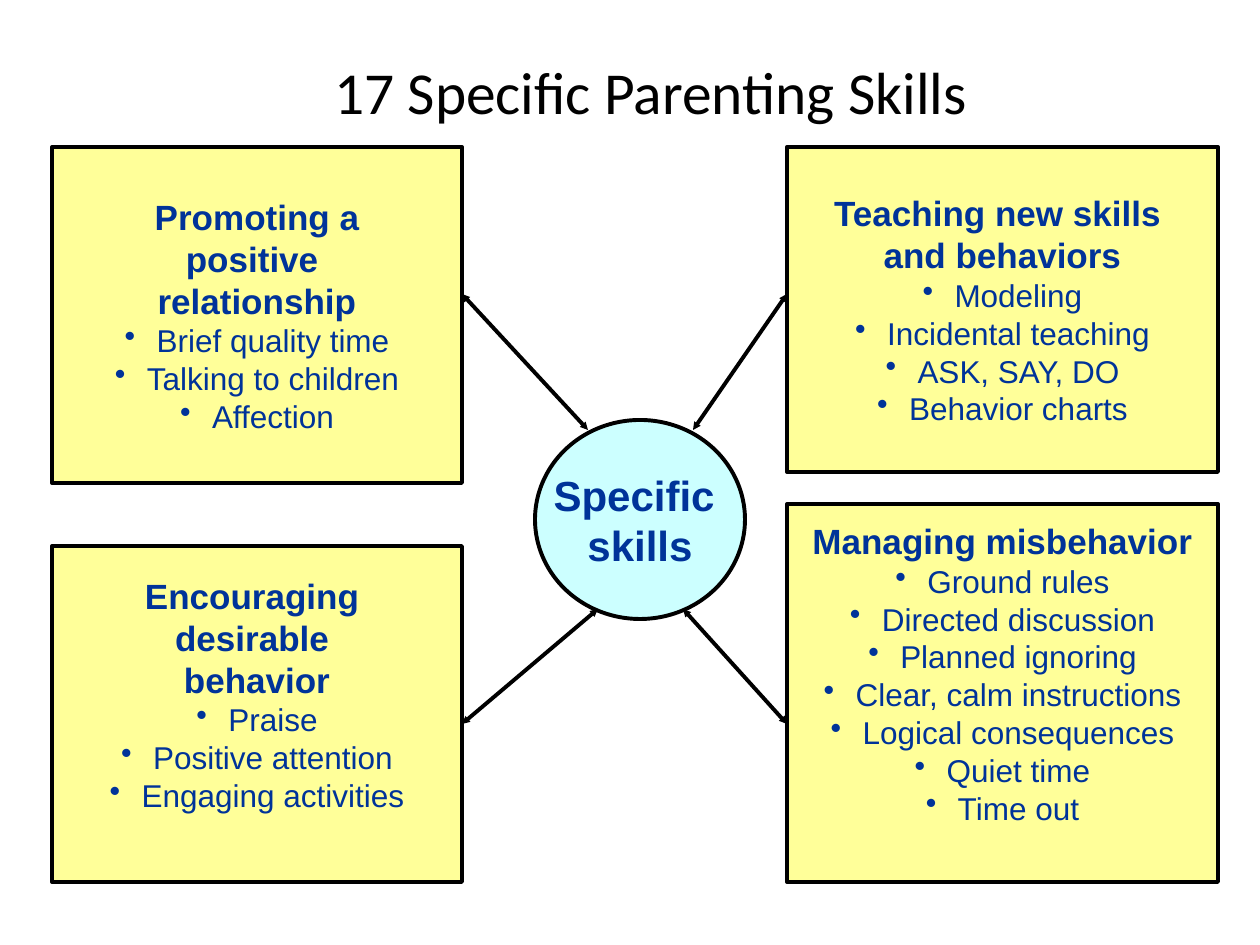
import dataclasses

import lxml.etree
import pptx
import pptx.dml.color
import pptx.enum.shapes
import pptx.enum.text
import pptx.oxml.ns
import pptx.util

EMU_PER_PX = 914400 / 126
SHAPES = pptx.enum.shapes.MSO_SHAPE


@dataclasses.dataclass(frozen=True)
class Theme:
    """Colours, fonts, type sizes and line measures of the slide."""

    ink: str = "000000"
    text: str = "003399"
    box: str = "FFFF99"
    hub: str = "CCFFFF"
    title_font: str = "Calibri"
    body_font: str = "Arial"
    title_size: int = 34
    hub_size: int = 24
    heading_size: int = 20
    item_size: int = 18
    line_width: float = 2.25
    bullet_indent: int = 32
    inset: int = 6
    spare_line: int = 40


THEME = Theme()

SKILL_BOXES = (
    ((52, 147, 410, 336), ("Promoting a", "positive ", "relationship"),
     ("Brief quality time", "Talking to children", "Affection"), 0),
    ((787, 147, 431, 325), ("Teaching new skills ", "and behaviors"),
     ("Modeling", "Incidental teaching", "ASK, SAY, DO", "Behavior charts"), 0),
    ((52, 546, 410, 336), ("Encouraging ", "desirable ", "behavior"),
     ("Praise", "Positive attention", "Engaging activities"), 1),
    ((787, 504, 431, 378), ("Managing misbehavior",),
     ("Ground rules", "Directed discussion", "Planned ignoring",
      "Clear, calm instructions", "Logical consequences", "Quiet time",
      "Time out"), 1),
)

ARROWS = (
    ((588, 430), (462, 294)),
    ((693, 430), (787, 294)),
    ((598, 609), (462, 724)),
    ((683, 609), (787, 724)),
)


def px(length):
    """Turn a length in px into EMU."""
    return pptx.util.Emu(round(length * EMU_PER_PX))


def rgb(value):
    """Turn a hexadecimal string into a colour."""
    return pptx.dml.color.RGBColor.from_string(value)


def style_para(para, font, size, color, bold=False):
    """Centre a paragraph and format its runs."""
    para.alignment = pptx.enum.text.PP_ALIGN.CENTER
    for span in para.runs:
        span.font.name = font
        span.font.size = pptx.util.Pt(size)
        span.font.bold = bold
        span.font.color.rgb = rgb(color)


def add_bullet(para):
    """Give a paragraph a round bullet with a hanging indent."""
    properties = para._p.get_or_add_pPr()
    indent = px(THEME.bullet_indent)
    properties.set("marL", str(indent))
    properties.set("indent", str(-indent))
    bullet = lxml.etree.SubElement(properties, pptx.oxml.ns.qn("a:buChar"))
    bullet.set("char", "•")


def add_title(page, text, bounds):
    """Add the slide title."""
    box = page.shapes.add_textbox(*map(px, bounds))
    frame = box.text_frame
    frame.word_wrap = True
    frame.vertical_anchor = pptx.enum.text.MSO_ANCHOR.MIDDLE
    frame.text = text
    style_para(frame.paragraphs[0], THEME.title_font, THEME.title_size, THEME.ink)


def add_panel(page, kind, bounds, fill, lines):
    """Add an outlined shape holding one paragraph per line."""
    panel = page.shapes.add_shape(kind, *map(px, bounds))
    panel.shadow.inherit = False
    panel.fill.solid()
    panel.fill.fore_color.rgb = rgb(fill)
    panel.line.color.rgb = rgb(THEME.ink)
    panel.line.width = pptx.util.Pt(THEME.line_width)
    frame = panel.text_frame
    frame.word_wrap = False
    frame.vertical_anchor = pptx.enum.text.MSO_ANCHOR.MIDDLE
    frame.text = "\n".join(lines)
    return frame


def add_skill_box(page, bounds, heading, items, spare_lines):
    """Add a box with a bold heading above bulleted skills."""
    frame = add_panel(page, SHAPES.RECTANGLE, bounds, THEME.box, heading + items)
    frame.margin_bottom = px(THEME.inset + spare_lines * THEME.spare_line)
    for para in frame.paragraphs[:len(heading)]:
        style_para(para, THEME.body_font, THEME.heading_size, THEME.text, True)
    for para in frame.paragraphs[len(heading):]:
        style_para(para, THEME.body_font, THEME.item_size, THEME.text)
        add_bullet(para)


def add_hub(page, bounds, lines):
    """Add the central ellipse."""
    frame = add_panel(page, SHAPES.OVAL, bounds, THEME.hub, lines)
    for para in frame.paragraphs:
        style_para(para, THEME.body_font, THEME.hub_size, THEME.text, True)


def add_arrow(page, start, end):
    """Add a straight line with an arrowhead at both ends."""
    arrow = page.shapes.add_connector(
        pptx.enum.shapes.MSO_CONNECTOR.STRAIGHT, *map(px, start + end))
    arrow.line.color.rgb = rgb(THEME.ink)
    arrow.line.width = pptx.util.Pt(THEME.line_width)
    outline = arrow.line._get_or_add_ln()
    for tag in ("a:headEnd", "a:tailEnd"):
        lxml.etree.SubElement(
            outline, pptx.oxml.ns.qn(tag), type="triangle", w="sm", len="sm")
    lxml.etree.SubElement(
        arrow._element.spPr, pptx.oxml.ns.qn("a:effectLst"))


def main():
    """Build the slide and save the deck."""
    deck = pptx.Presentation()
    deck.slide_width, deck.slide_height = px(1260), px(945)
    page = deck.slides.add_slide(deck.slide_layouts[6])
    add_title(page, "17 Specific Parenting Skills", (199, 42, 903, 97))
    for skill_box in SKILL_BOXES:
        add_skill_box(page, *skill_box)
    add_hub(page, (535, 420, 210, 199), ("Specific ", "skills"))
    for start, end in ARROWS:
        add_arrow(page, start, end)
    deck.save("out.pptx")


if __name__ == "__main__":
    main()
